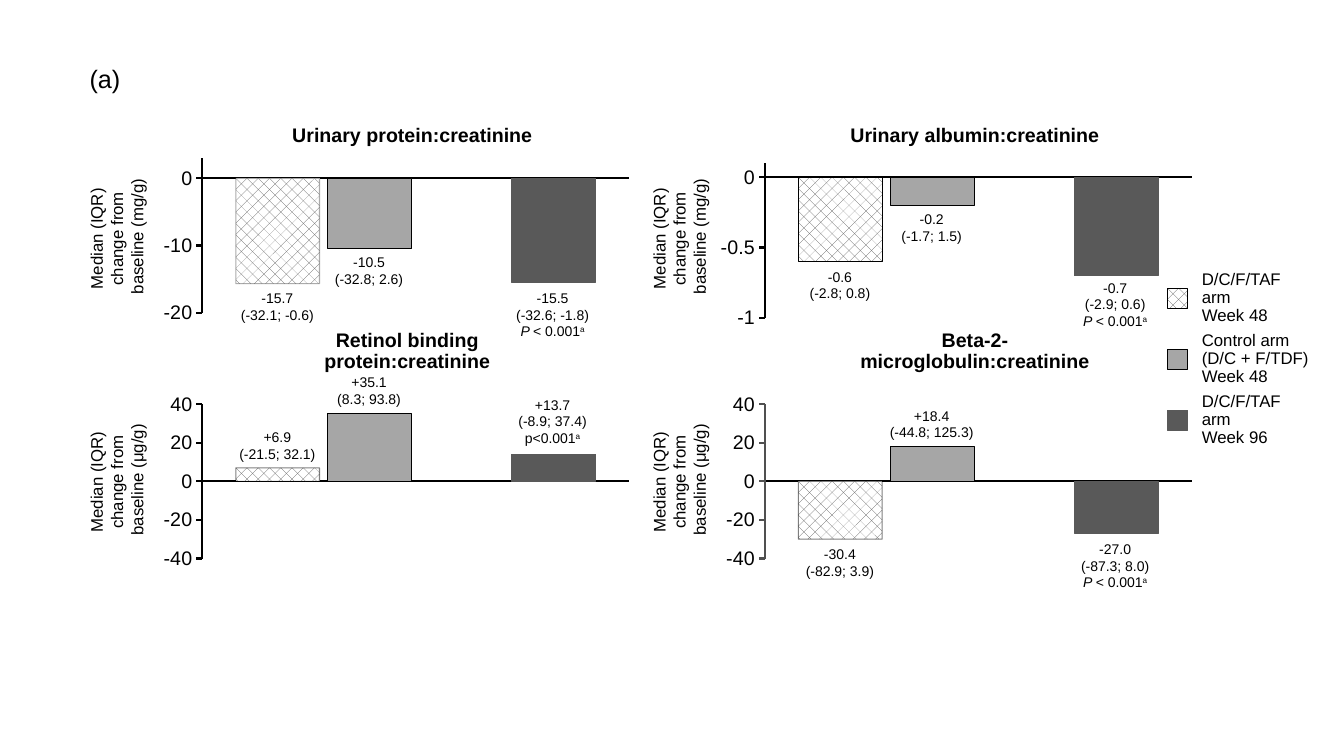
from lxml import etree
from pptx import Presentation
from pptx import util as u
from pptx.chart.data import CategoryChartData
from pptx.dml.color import RGBColor
from pptx.enum import chart as ch, dml, shapes, text
from pptx.oxml import parse_xml
from pptx.oxml.ns import nsdecls, qn

BLACK = RGBColor(0x00, 0x00, 0x00)
WHITE = RGBColor(0xFF, 0xFF, 0xFF)
AXIS_GREY = RGBColor(0x50, 0x50, 0x50)
DARK = RGBColor(0x59, 0x59, 0x59)
MID = RGBColor(0xA6, 0xA6, 0xA6)

CELL = u.Inches(0.1)
PANEL_W, PANEL_H = 55.1, 23.6
PLOT = {"x": 0.123, "y": 0.225, "w": 0.768, "h": 0.649}
FIRST_BAR, BAR_STEP = 14.2, 9.1
PANEL_X = (13.3, 69.1)
TITLE_Y = (13.55, 34.9)
AXIS_TITLE_Y = (23.45, 47.6)
P_VALUE = [("\n", {}), ("P ", {"italic": True}), ("< 0.001", {}), ("a", {"raised": True})]
P_PLAIN = [("\np<0.001", {}), ("a", {"raised": True})]

# name, fill (None is the hatch), outline, label width
ARMS = [("D/C/F/TAF arm \nWeek 48", None, BLACK, 9.4),
        ("Control arm (D/C + F/TDF)\nWeek 48", MID, BLACK, 11.4),
        ("D/C/F/TAF arm \nWeek 96", DARK, DARK, 9.4)]

# labels: bar slot, top row, text, p-value runs
PANELS = [
    dict(col=0, row=0, top=10.4, title="Urinary protein:creatinine", title_x=27.6, title_w=27.2,
         unit="mg/g", scale=(-20, 3, 10), values=(-15.7, -10.5, None, -15.5),
         hatch_line=(DARK, 50), axis=BLACK,
         labels=[(0, 28.2, "-15.7\n(-32.1; -0.6)", []), (1, 24.7, "-10.5\n(-32.8; 2.6)", []),
                 (3, 28.2, "-15.5\n(-32.6; -1.8)", P_VALUE)]),
    dict(col=1, row=0, top=10.9, title="Urinary albumin:creatinine", title_x=27.6, title_w=27.2,
         unit="mg/g", scale=(-1, 0.1, 0.5), values=(-0.6, -0.2, None, -0.7),
         hatch_line=(BLACK, 100), axis=BLACK,
         labels=[(0, 26.1, "-0.6\n(-2.8; 0.8)", []), (1, 20.4, "-0.2\n(-1.7; 1.5)", []),
                 (3, 27.2, "-0.7\n(-2.9; 0.6)", P_VALUE)]),
    dict(col=0, row=1, top=34.8, title="Retinol binding protein:creatinine", title_x=27.1,
         title_w=27.2, unit="μg/g", scale=(-40, 40, 20), values=(7, 35, None, 14),
         hatch_line=(BLACK, 50), axis=BLACK,
         labels=[(0, 42, "+6.9\n(-21.5; 32.1)", []), (1, 36.6, "+35.1\n(8.3; 93.8)", []),
                 (3, 38.8, "+13.7\n(-8.9; 37.4)", P_PLAIN)]),
    dict(col=1, row=1, top=34.8, title="Beta-2-microglobulin:creatinine", title_x=27.6,
         title_w=29.3, unit="μg/g", scale=(-40, 40, 20), values=(-30, 18, None, -27),
         hatch_line=(BLACK, 50), axis=AXIS_GREY,
         labels=[(0, 53.6, "-30.4\n(-82.9; 3.9)", []), (1, 39.9, "+18.4\n(-44.8; 125.3)", []),
                 (3, 53.1, "-27.0\n(-87.3; 8.0)", P_VALUE)]),
]


def cells(*lengths):
    """Turn grid cells into slide lengths."""
    return [round(n * CELL) for n in lengths]


def paint(target, color, outline):
    """Fill and outline a shape or a series format; no colour means the hatch."""
    if color is None:
        target.fill.patterned()
        target.fill.pattern = dml.MSO_PATTERN.PERCENT_25
        target.fill.fore_color.rgb = DARK
        target.fill.back_color.rgb = WHITE
    else:
        target.fill.solid()
        target.fill.fore_color.rgb = color
    target.line.color.rgb = outline
    target.line.width = u.Pt(0.75)


def write(tf, runs, size=12, bold=False, align=None, spacing=None):
    """Write (text, format) runs into one paragraph, with newlines as line breaks."""
    p = tf.paragraphs[0]
    p.alignment = align
    p.line_spacing = spacing
    for content, style in runs:
        for i, line in enumerate(content.split("\n")):
            if i:
                p.add_line_break()
            if not line:
                continue
            r = p.add_run()
            r.text = line
            f = r.font
            f.name, f.size, f.bold, f.color.rgb = "Arial", u.Pt(size), bold, BLACK
            f.italic = style.get("italic", False)
            if style.get("raised"):
                r._r.get_or_add_rPr().set("baseline", "30000")


class Figure:
    def __init__(self, slide):
        self.s = slide

    def text(self, x, y, w, h, runs, inset=True, wrap=True, rotation=0, **style):
        sp = self.s.shapes.add_textbox(*cells(x, y, w, h))
        sp.rotation = rotation
        tf = sp.text_frame
        tf.word_wrap = wrap
        if not inset:
            tf.margin_left = tf.margin_right = tf.margin_top = tf.margin_bottom = 0
            tf.vertical_anchor = text.MSO_ANCHOR.MIDDLE
        write(tf, runs, **style)

    def centred(self, x, y, w, h, runs, **style):
        """Place centred text around the point x, y."""
        self.text(x - w / 2, y - h / 2, w, h, runs, align=text.PP_ALIGN.CENTER, **style)

    def swatch(self, x, y, color, outline):
        sp = self.s.shapes.add_shape(shapes.MSO_SHAPE.RECTANGLE, *cells(x, y, 2, 2))
        sp.shadow.inherit = False
        paint(sp, color, outline)

    def chart(self, x, y, values, scale, hatch_line, axis):
        data = CategoryChartData()
        data.categories = ["1"]
        names = [arm[0].replace("\n", "") for arm in ARMS]
        names.insert(2, "Series 3")
        for name, value in zip(names, values):
            data.add_series(name, [value])
        chart = self.s.shapes.add_chart(ch.XL_CHART_TYPE.COLUMN_CLUSTERED,
                                        *cells(x, y, PANEL_W, PANEL_H), data).chart
        chart.has_legend = chart.has_title = False
        chart.font.name, chart.font.size = "Arial", u.Pt(14)
        chart.font.color.rgb = BLACK
        self.fix_plot_area(chart)

        plot = chart.plots[0]
        plot.gap_width, plot.overlap, plot.vary_by_categories = 80, -10, False
        for slot, arm in zip((0, 1, 3), ARMS):
            series = plot.series[slot]
            series.invert_if_negative = False
            paint(series.format, arm[1], arm[2] if slot else hatch_line[0])
        line_color = plot.series[0]._element.xpath("c:spPr/a:ln//a:srgbClr")[0]
        etree.SubElement(line_color, qn("a:alpha")).set("val", str(hatch_line[1] * 1000))

        cat, val = chart.category_axis, chart.value_axis
        cat.tick_label_position = ch.XL_TICK_LABEL_POSITION.NONE
        cat.major_tick_mark = ch.XL_TICK_MARK.NONE
        val.major_tick_mark = ch.XL_TICK_MARK.OUTSIDE
        val.minimum_scale, val.maximum_scale, val.major_unit = scale
        val.tick_labels.number_format = "General"
        val.tick_labels.number_format_is_linked = False
        for ax, color in ((cat, BLACK), (val, axis)):
            ax.has_major_gridlines = False
            ax.format.line.color.rgb = color
            ax.format.line.width = u.Pt(1.5)

    def fix_plot_area(self, chart):
        area = chart._chartSpace.xpath("c:chart/c:plotArea")[0]
        for old in area.findall(qn("c:layout")):
            area.remove(old)
        modes = '<c:layoutTarget val="inner"/><c:xMode val="edge"/><c:yMode val="edge"/>'
        sides = "".join(f'<c:{k} val="{v}"/>' for k, v in PLOT.items())
        area.insert(0, parse_xml(f'<c:layout {nsdecls("c")}><c:manualLayout>{modes}{sides}'
                                 '</c:manualLayout></c:layout>'))

    def panel(self, col, row, top, title, title_x, title_w, unit, labels, **chart):
        x = PANEL_X[col]
        self.chart(x, top, **chart)
        self.centred(x + title_x, TITLE_Y[row], title_w, 3.6, [(title, {})],
                     inset=False, size=14, bold=True, spacing=0.9)
        self.centred(x - 1.7, AXIS_TITLE_Y[row], 22.9, 7.1,
                     [(f"Median (IQR) \nchange from \nbaseline ({unit})", {})], rotation=270)
        for slot, y, label, p_value in labels:
            h = 6.1 if p_value else 4.4
            self.centred(x + FIRST_BAR + slot * BAR_STEP, y + h / 2, 13.2, h,
                         [(label, {})] + p_value, size=10)

    def legend(self, x, y, step):
        for i, (name, color, outline, w) in enumerate(ARMS):
            self.swatch(x, y + i * step, color, outline)
            self.text(x + 3.4, y + i * step - 1.2, w, 4.4, [(name, {})],
                      inset=False, spacing=0.9)


def main():
    prs = Presentation()
    prs.slide_width, prs.slide_height = u.Inches(13.33), u.Inches(7.5)
    fig = Figure(prs.slides.add_slide(prs.slide_layouts[6]))
    fig.text(7.9, 5.8, 5.1, 4, [("(a)", {})], wrap=False, size=18)
    for panel in PANELS:
        fig.panel(**panel)
    fig.legend(115.8, 28.6, 6.05)
    prs.save("out.pptx")


if __name__ == "__main__":
    main()
